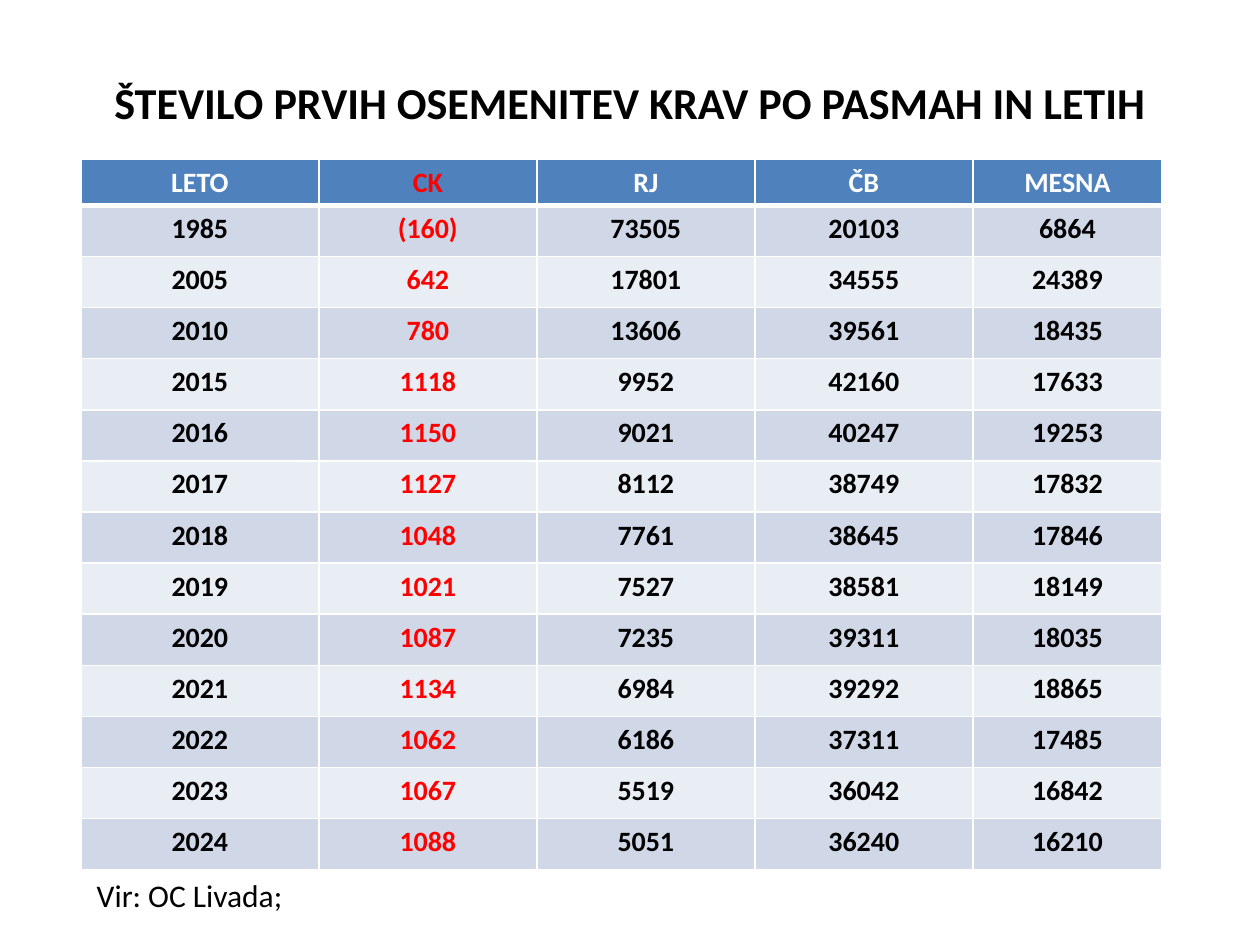
"""Build a slide with a table of first cow inseminations by breed and year."""
from dataclasses import dataclass

from lxml.etree import SubElement
from pptx import Presentation
from pptx.dml.color import RGBColor
from pptx.enum.text import MSO_ANCHOR as Anchor, PP_ALIGN as Align
from pptx.oxml.ns import qn
from pptx.util import Pt


@dataclass(frozen=True)
class Theme:
    font: str = "Calibri"
    black: str = "000000"
    white: str = "FFFFFF"
    red: str = "FF0000"
    header: str = "4F81BD"
    bands: tuple = ("D0D8E8", "E9EDF4")
    title_size: float = 25.2
    table_size: float = 16
    source_size: float = 18


THEME = Theme()


def write(frame, text, size, color=THEME.black, bold=False, align=Align.LEFT):
    paragraph = frame.paragraphs[0]
    paragraph.alignment = align
    run = paragraph.add_run()
    run.text = text
    run.font.name = THEME.font
    run.font.size = Pt(size)
    run.font.bold = bold
    run.font.color.rgb = RGBColor.from_string(color)


def add_borders(cell, bottom):
    properties = cell._tc.get_or_add_tcPr()
    for side, width in (("L", 1), ("R", 1), ("T", 1), ("B", bottom)):
        line = SubElement(properties, qn(f"a:ln{side}"), w=str(Pt(width)))
        fill = SubElement(line, qn("a:solidFill"))
        SubElement(fill, qn("a:srgbClr"), val=THEME.white)


inseminations = [
    ("LETO", "CK", "RJ", "ČB", "MESNA"),
    ("1985", "(160)", "73505", "20103", "6864"),
    ("2005", "642", "17801", "34555", "24389"),
    ("2010", "780", "13606", "39561", "18435"),
    ("2015", "1118", "9952", "42160", "17633"),
    ("2016", "1150", "9021", "40247", "19253"),
    ("2017", "1127", "8112", "38749", "17832"),
    ("2018", "1048", "7761", "38645", "17846"),
    ("2019", "1021", "7527", "38581", "18149"),
    ("2020", "1087", "7235", "39311", "18035"),
    ("2021", "1134", "6984", "39292", "18865"),
    ("2022", "1062", "6186", "37311", "17485"),
    ("2023", "1067", "5519", "36042", "16842"),
    ("2024", "1088", "5051", "36240", "16210"),
]
column_widths = [136, 124.6, 124.6, 124.6, 108]
row_heights = [26.4] + [29.2] * (len(inseminations) - 1)

presentation = Presentation()
presentation.slide_width, presentation.slide_height = Pt(720), Pt(540)
slide = presentation.slides.add_slide(presentation.slide_layouts[6])

title = slide.shapes.add_textbox(Pt(36), Pt(21.6), Pt(648), Pt(72.7)).text_frame
title.word_wrap = True
title.vertical_anchor = Anchor.MIDDLE
write(title, "ŠTEVILO PRVIH OSEMENITEV KRAV PO PASMAH IN LETIH",
      size=THEME.title_size, bold=True, align=Align.CENTER)

breeds = slide.shapes.add_table(
    len(inseminations), len(column_widths), Pt(46.2), Pt(91),
    Pt(sum(column_widths)), Pt(sum(row_heights))).table
for column, width in zip(breeds.columns, column_widths):
    column.width = Pt(width)

for row, (values, height) in enumerate(zip(inseminations, row_heights)):
    breeds.rows[row].height = Pt(height)
    is_header = row == 0
    band = THEME.header if is_header else THEME.bands[(row - 1) % 2]
    ink = THEME.white if is_header else THEME.black
    for column, value in enumerate(values):
        cell = breeds.cell(row, column)
        add_borders(cell, bottom=3 if is_header else 1)
        cell.fill.solid()
        cell.fill.fore_color.rgb = RGBColor.from_string(band)
        write(cell.text_frame, value, size=THEME.table_size, bold=True,
              color=THEME.red if column == 1 else ink, align=Align.CENTER)

source = slide.shapes.add_textbox(Pt(48.2), Pt(496.8), Pt(127.4), Pt(29)).text_frame
source.word_wrap = False
write(source, "Vir: OC Livada;", size=THEME.source_size)

presentation.save("out.pptx")
